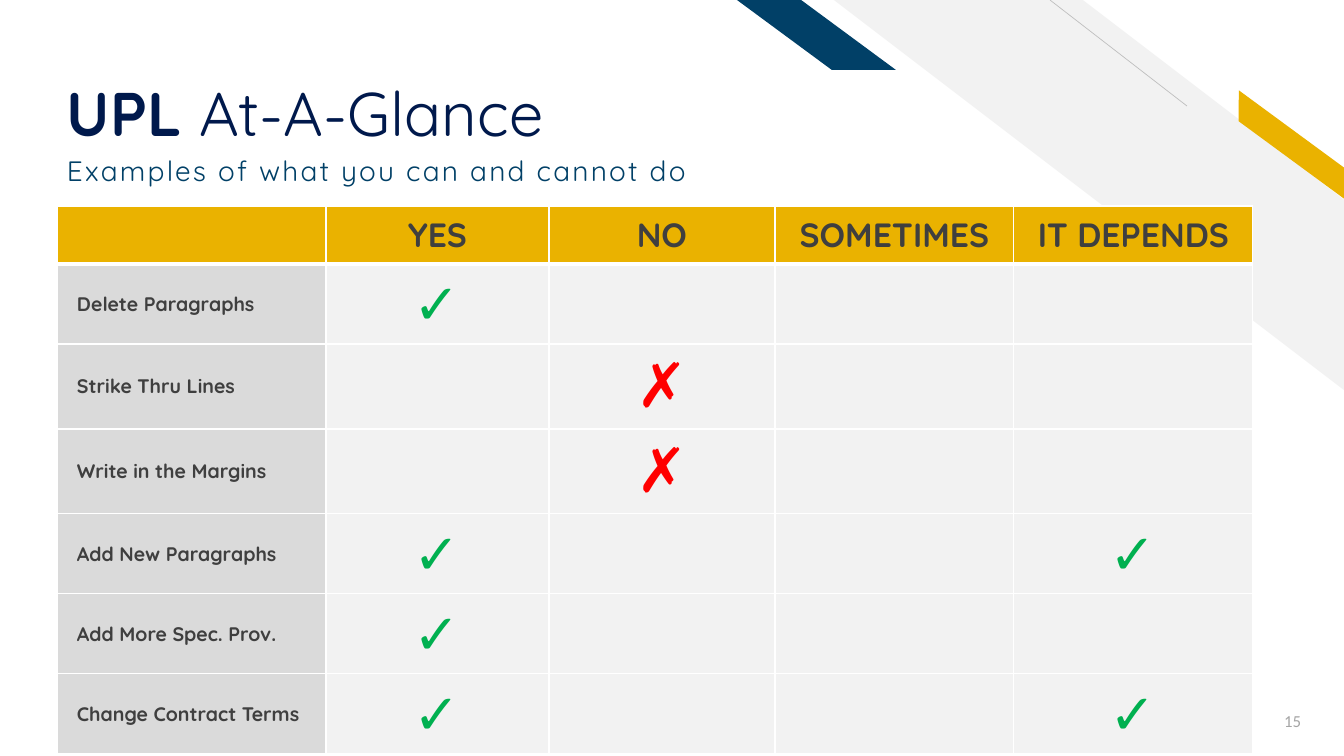
from lxml import etree
from pptx import Presentation
from pptx.dml.color import RGBColor
from pptx.enum import shapes, text
from pptx.oxml import ns
from pptx.util import Pt

# Content
HEADS = ["", "YES", "NO", "SOMETIMES", "IT DEPENDS"]
YES, NO = ("✓", "Quicksand", 40, "00B050"), ("✗", "Calibri", 44, "FF0000")
ROWS = [
    ("Delete Paragraphs", {1: YES}),
    ("Strike Thru Lines", {2: NO}),
    ("Write in the Margins", {2: NO}),
    ("Add New Paragraphs", {1: YES, 4: YES}),
    ("Add More Spec. Prov.", {1: YES}),
    ("Change Contract Terms", {1: YES, 4: YES}),
]
NAVY, BLUE, GOLD, PALE, GREY, DARK = (
    "00194C", "014067", "EAB200", "F2F2F2", "DADADA", "3F3F3F")
COLS = [269, 223, 226, 239, 239]
HEAD, ROW, TALL = 58, 80, 85
LEFT, MID, RIGHT = (text.PP_ALIGN.LEFT, text.PP_ALIGN.CENTER,
                    text.PP_ALIGN.RIGHT)
KIND, ANCHOR = shapes.MSO_SHAPE, text.MSO_ANCHOR

# Stripes: kind, box, adjustment, fill, turn
STRIPES = [
    (KIND.DIAGONAL_STRIPE, (834, 0, 510, 390), 0.512, PALE, 0),
    (KIND.PARALLELOGRAM, (1217, 132, 149, 25), 0.72, GOLD, 36.3),
    (KIND.PARALLELOGRAM, (737, 0, 159, 70), 1.356, BLUE, 0),
]

# Text boxes: box, anchor, alignment, paragraph format, runs
# Run: wording, font, size, colour, bold, extra run attributes
LABELS = [
    ((57, 23, 918, 127), ANCHOR.BOTTOM, LEFT, {"line_spacing": 0.9}, [
        ("UPL ", "Quicksand", 44, NAVY, True, {}),
        ("At-A-Glance", "Quicksand", 44, NAVY, False, {})]),
    ((57, 152, 812, 68), ANCHOR.TOP, LEFT,
     {"line_spacing": 0.9, "space_before": Pt(10)}, [
        ("Examples of what you can and cannot do", "Quicksand", 20, BLUE,
         False, {"spc": "160"})]),
    ((1229, 701, 82, 40), ANCHOR.MIDDLE, RIGHT, {}, [
        ("15", "Calibri", 12, "A5A5A5", False, {})]),
]


def px(n):
    return round(n * 914400 / 100.8)


def paint(fill, hue):
    fill.solid()
    fill.fore_color.rgb = RGBColor.from_string(hue)


def put(para, words, face, size, hue, bold, extra):
    run = para.add_run()
    run.text = words
    for key, val in {"name": face, "size": Pt(size), "bold": bold}.items():
        setattr(run.font, key, val)
    paint(run.font.fill, hue)
    for key, val in extra.items():
        run.font._element.set(key, val)


def edge(cell, side, width):
    tag = etree.SubElement(cell._tc.get_or_add_tcPr(), ns.qn("a:ln" + side),
                           w=str(Pt(width)))
    fill = etree.SubElement(tag, ns.qn("a:solidFill"))
    etree.SubElement(fill, ns.qn("a:srgbClr"), val="FFFFFF")


def style(cell, hue, sides, inset):
    for side, width in sides.items():
        edge(cell, side, width)
    paint(cell.fill, hue)
    cell.vertical_anchor = ANCHOR.MIDDLE
    cell.margin_left = px(inset)


deck = Presentation()
deck.slide_width, deck.slide_height = px(1344), px(756)
page = deck.slides.add_slide(deck.slide_layouts[6])

# Background stripes
for kind, box, bend, hue, turn in STRIPES:
    bar = page.shapes.add_shape(kind, *map(px, box))
    bar.adjustments[0] = bend
    bar.rotation = turn
    bar.shadow.inherit = False
    bar.line.fill.background()
    paint(bar.fill, hue)
    bar._element.spPr.xfrm.set("flipH", "1")

# Thin slanted line
line = page.shapes.add_connector(
    shapes.MSO_CONNECTOR.STRAIGHT, *map(px, (1187, 106, 1050, 0)))
line.line.width = Pt(0.5)
paint(line.line.fill, "BFBFBF")
etree.SubElement(line._element.spPr, ns.qn("a:effectLst"))

# Title, subtitle and page number
for box, anchor, align, form, runs in LABELS:
    frame = page.shapes.add_textbox(*map(px, box)).text_frame
    frame.word_wrap = True
    frame.vertical_anchor = anchor
    if anchor == ANCHOR.BOTTOM:
        frame.margin_bottom = 0
    para = frame.paragraphs[0]
    para.alignment = align
    for key, val in form.items():
        setattr(para, key, val)
    for run in runs:
        put(para, *run)

# Table
highs = [HEAD] + [TALL if NO in marks.values() else ROW for _, marks in ROWS]
grid = page.shapes.add_table(
    len(highs), len(COLS), px(57), px(206), px(sum(COLS)),
    px(sum(highs))).table
grid.horz_banding = False
for col, wide in zip(grid.columns, COLS):
    col.width = px(wide)
for r, row in enumerate(grid.rows):
    row.height = px(highs[r])
    sides = {"L": 1, "R": 1, "T": 3 if r == 1 else 1, "B": 1 if r else 3}
    for c, cell in enumerate(row.cells):
        first = r > 0 and c == 0
        hue = GOLD if r == 0 else GREY if first else PALE
        style(cell, hue, sides, 20 if first else 10)
        if r == 0:
            mark = (HEADS[c], "Quicksand", 24, DARK)
        elif first:
            mark = (ROWS[r - 1][0], "Quicksand", 14, DARK)
        else:
            mark = ROWS[r - 1][1].get(c)
        if mark and mark[0]:
            para = cell.text_frame.paragraphs[0]
            para.alignment = LEFT if first else MID
            put(para, *mark, r == 0 or first, {})

deck.save("out.pptx")
